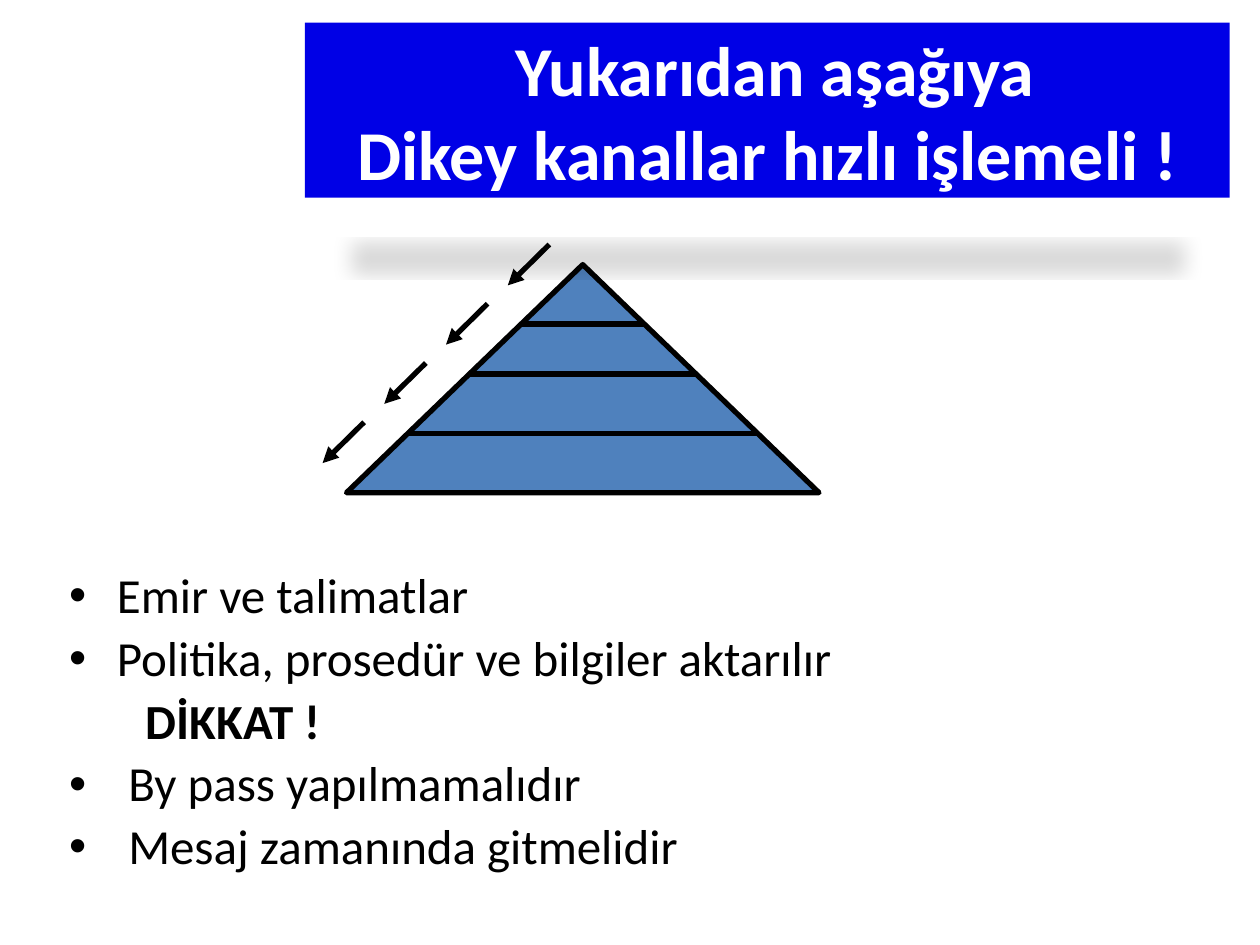
import pptx
import pptx.dml.color
import pptx.enum.shapes
import pptx.enum.text
import pptx.oxml
import pptx.oxml.ns
import pptx.util

THEME = {
    "font": "Calibri",
    "title_size": 40,
    "body_size": 28,
    "line_width": 3,
    "white": "FFFFFF",
    "black": "000000",
    "banner": "0000E6",
    "pyramid": "4F81BD",
}
WIDTH, HEIGHT = 10, 7.5
PYRAMID = (27.5, 28, 37.5, 24.13)
LEVELS = (0.26, 0.48, 0.74)
BULLETS = [
    ("Emir ve talimatlar", 0.38, True),
    ("Politika, prosedür ve bilgiler aktarılır", 0.38, True),
    ("DİKKAT !", 0.61, False),
    ("By pass yapılmamalıdır", 0.47, True),
    ("Mesaj zamanında gitmelidir", 0.47, True),
]


def share(x, y):
    return pptx.util.Inches(x * WIDTH / 100), pptx.util.Inches(y * HEIGHT / 100)


def color(name):
    return pptx.dml.color.RGBColor.from_string(THEME[name])


def element(xml):
    return pptx.oxml.parse_xml(xml.replace(">", f" {pptx.oxml.ns.nsdecls('a')}>", 1))


def apply(target, values):
    for name, value in values.items():
        setattr(target, name, value)


def add_run(p, text, size, ink, bold):
    r = p.add_run()
    r.text = text
    apply(r.font, {"name": THEME["font"], "size": pptx.util.Pt(THEME[size]), "bold": bold})
    r.font.color.rgb = color(ink)


def outline(sp):
    sp.line.color.rgb = color("black")
    sp.line.width = pptx.util.Pt(THEME["line_width"])


def add_block(slide, kind, box, fill):
    sp = slide.shapes.add_shape(kind, *share(*box[:2]), *share(*box[2:]))
    sp.shadow.inherit = False
    sp.fill.solid()
    sp.fill.fore_color.rgb = color(fill)
    return sp


def add_line(slide, start, end, arrow=False):
    sp = slide.shapes.add_connector(
        pptx.enum.shapes.MSO_CONNECTOR.STRAIGHT, *share(*start), *share(*end))
    outline(sp)
    if arrow:
        sp.line._get_or_add_ln().append(element('<a:tailEnd type="triangle"></a:tailEnd>'))
    sp._element.spPr.append(element("<a:effectLst></a:effectLst>"))


def add_pyramid(slide):
    left, top, width, height = PYRAMID
    outline(add_block(slide, pptx.enum.shapes.MSO_SHAPE.ISOSCELES_TRIANGLE, PYRAMID, "pyramid"))
    center = left + width / 2
    for level in LEVELS:
        y, reach = top + level * height, level * width / 2
        add_line(slide, (center - reach, y), (center + reach, y))


def add_arrows(slide):
    for i in range(4):
        x, y = 43.6 - 4.9 * i, 25.87 + 6.27 * i
        add_line(slide, (x, y), (x - 3.3, y + 4.33), arrow=True)


def add_banner(slide, lines):
    sp = add_block(slide, pptx.enum.shapes.MSO_SHAPE.RECTANGLE, (24.2, 2.4, 73.4, 18.53), "banner")
    sp.line.fill.background()
    sp._element.spPr.find(pptx.oxml.ns.qn("a:effectLst")).append(element(
        '<a:outerShdw blurRad="152400" dist="317500" dir="5400000" sx="90000" sy="-19000" '
        'rotWithShape="0"><a:srgbClr val="000000"><a:alpha val="15000"/></a:srgbClr></a:outerShdw>'))
    tf = sp.text_frame
    apply(tf, {"word_wrap": True, "vertical_anchor": pptx.enum.text.MSO_ANCHOR.MIDDLE})
    for i, line in enumerate(lines):
        p = tf.add_paragraph() if i else tf.paragraphs[0]
        p.alignment = pptx.enum.text.PP_ALIGN.CENTER
        add_run(p, line, "title_size", "white", True)


def add_bullets(slide, items):
    tf = slide.shapes.add_textbox(*share(4.5, 59.8), *share(93.3, 34.2)).text_frame
    tf.word_wrap = True
    for i, (text, margin, bulleted) in enumerate(items):
        p = tf.add_paragraph() if i else tf.paragraphs[0]
        apply(p, {"line_spacing": 0.9, "space_before": pptx.util.Pt(0.2 * THEME["body_size"])})
        pPr = p._p.get_or_add_pPr()
        indent = pptx.util.Inches(margin)
        pPr.set("marL", str(indent))
        pPr.set("indent", str(-indent if bulleted else 0))
        if bulleted:
            pPr.append(element('<a:buFont typeface="Arial"></a:buFont>'))
            pPr.append(element('<a:buChar char="•"></a:buChar>'))
        add_run(p, text, "body_size", "black", not bulleted)


def main():
    prs = pptx.Presentation()
    apply(prs, {"slide_width": pptx.util.Inches(WIDTH), "slide_height": pptx.util.Inches(HEIGHT)})
    slide = prs.slides.add_slide(prs.slide_layouts[6])
    add_bullets(slide, BULLETS)
    add_pyramid(slide)
    add_arrows(slide)
    add_banner(slide, [" Yukarıdan aşağıya", "Dikey kanallar hızlı işlemeli !"])
    prs.save("out.pptx")


if __name__ == "__main__":
    main()
